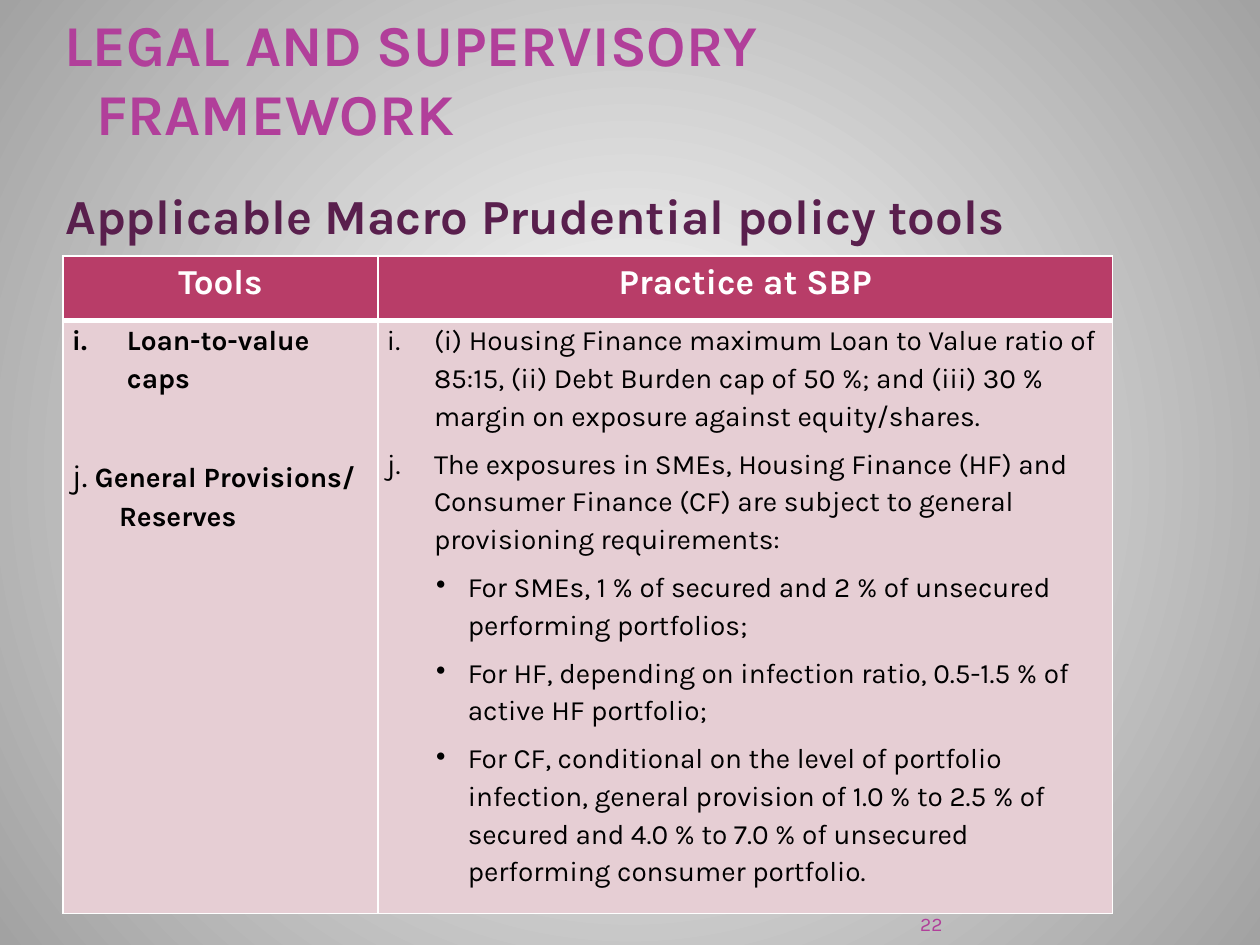
import lxml.etree
import pptx
import pptx.dml.color
import pptx.enum.text
import pptx.oxml
import pptx.oxml.ns
import pptx.util

Cm = pptx.util.Cm
Pt = pptx.util.Pt
RGBColor = pptx.dml.color.RGBColor
qn = pptx.oxml.ns.qn
ALIGN = pptx.enum.text.PP_ALIGN
ANCHOR = pptx.enum.text.MSO_ANCHOR

FONT = "Karla"
WHITE = RGBColor(0xFF, 0xFF, 0xFF)
BLACK = RGBColor(0, 0, 0)
GREY = RGBColor(0xA2, 0xA2, 0xA2)
MAGENTA = RGBColor(0xB1, 0x3F, 0x9A)
PLUM = RGBColor(0x59, 0x1F, 0x4D)
CRIMSON = RGBColor(0xB8, 0x3D, 0x68)
BLUSH = RGBColor(0xE6, 0xCE, 0xD4)


def style_font(font, size, color, bold=False):
    font.name = FONT
    font.size = Pt(size)
    font.bold = bold
    font.color.rgb = color


def add_text(left, top, width, height, text, size, color, bold, anchor, margins):
    box = page.shapes.add_textbox(Cm(left), Cm(top), Cm(width), Cm(height))
    frame = box.text_frame
    frame.word_wrap = True
    frame.vertical_anchor = anchor
    frame.margin_left = frame.margin_right = Cm(margins[0])
    frame.margin_top = frame.margin_bottom = Cm(margins[1])
    para = frame.paragraphs[0]
    para.text = text
    style_font(para.font, size, color, bold)
    return para


deck = pptx.Presentation()
deck.slide_width = Cm(25.4)
deck.slide_height = Cm(19.05)
page = deck.slides.add_slide(deck.slide_layouts[6])

backdrop = page.background.fill
backdrop.gradient()
for stop, color, position in zip(backdrop.gradient_stops, (WHITE, GREY), (0, 1)):
    stop.color.rgb = color
    stop.position = position
gradient = page.background._cSld.find(".//" + qn("a:gradFill"))
linear = gradient.find(qn("a:lin"))
circle = lxml.etree.Element(qn("a:path"), path="circle")
lxml.etree.SubElement(circle, qn("a:fillToRect"), l="50000", t="50000", r="50000", b="50000")
gradient.replace(linear, circle)

number = add_text(17.37, 18.21, 1.63, 0.64, "22", 11, MAGENTA, False, ANCHOR.BOTTOM, (0, 0))
number.alignment = ALIGN.RIGHT

table = page.shapes.add_table(2, 2, Cm(1.27), Cm(5.16), Cm(21.16), Cm(13.26)).table
for column, width in zip(table.columns, (6.35, 14.81)):
    column.width = Cm(width)
for row, height in zip(table.rows, (1.3, 11.96)):
    row.height = Cm(height)

ROMAN = ("a:buAutoNum", {"type": "romanLcPeriod"})
LETTER_J = ("a:buAutoNum", {"type": "alphaLcPeriod", "startAt": "10"})
DOT = ("a:buChar", {"char": "•"})
tools = [
    (["Loan-to-value caps"], ROMAN, 1.11, 1.11, 0),
    (["j. ", "General Provisions/ Reserves"], None, 0.95, 0.95, 33),
]
practices = [
    (["(i) Housing Finance maximum Loan to Value ratio of 85:15, (ii) Debt Burden cap of 50 %; "
      "and (iii) 30 % margin on exposure against equity/shares."], ROMAN, 0.95, 0.95, 0),
    (["The exposures in SMEs, Housing Finance (HF) and Consumer Finance (CF) are subject to "
      "general provisioning requirements:"], LETTER_J, 0.95, 0.95, 6),
    (["For SMEs, 1 % of secured and 2 % of unsecured performing portfolios;"], DOT, 1.63, 0.64, 6),
    (["For HF, depending on infection ratio, 0.5-1.5 % of active HF portfolio;"], DOT, 1.63, 0.64, 6),
    (["For CF, conditional on the level of portfolio infection, general provision of 1.0 % to 2.5 % "
      "of secured and 4.0 % to 7.0 % of unsecured performing consumer portfolio."], DOT, 1.63, 0.64, 6),
]

for index, heading in enumerate(("Tools", "Practice at SBP")):
    cell = table.cell(0, index)
    cell.text = heading
    para = cell.text_frame.paragraphs[0]
    para.alignment = ALIGN.CENTER
    style_font(para.font, 20, WHITE, True)

for index, (entries, bold) in enumerate(((tools, True), (practices, False))):
    cell = table.cell(1, index)
    cell.margin_left = cell.margin_right = Cm(0.18)
    cell.margin_top = cell.margin_bottom = 0
    frame = cell.text_frame
    for order, (texts, bullet, left, hanging, before) in enumerate(entries):
        para = frame.add_paragraph() if order else frame.paragraphs[0]
        properties = para._p.get_or_add_pPr()
        properties.set("marL", str(Cm(left)))
        properties.set("indent", str(-Cm(hanging)))
        if bullet:
            tag, attributes = bullet
            lxml.etree.SubElement(properties, qn(tag), attributes)
        para.line_spacing = 1.15
        if before:
            para.space_before = Pt(before)
        for text in texts:
            para.add_run().text = text
        if len(texts) == 1:
            style_font(para.font, 16, BLACK, bold)
        else:
            label, name = para.runs
            style_font(label.font, 18, BLACK)
            style_font(name.font, 16, BLACK, True)

for row_index, (color, top, bottom) in enumerate(((CRIMSON, 1, 3), (BLUSH, 3, 1))):
    for cell in table.rows[row_index].cells:
        cell.fill.solid()
        cell.fill.fore_color.rgb = color
        edges = (("a:lnL", 1), ("a:lnR", 1), ("a:lnT", top), ("a:lnB", bottom))
        for order, (tag, width) in enumerate(edges):
            edge = lxml.etree.Element(qn(tag), w=str(Pt(width)))
            solid = lxml.etree.SubElement(edge, qn("a:solidFill"))
            lxml.etree.SubElement(solid, qn("a:srgbClr"), val=str(WHITE))
            cell._tc.get_or_add_tcPr().insert(order, edge)

title = add_text(0.84, 1.32, 21.6, 1.65, "LEGAL AND SUPERVISORY FRAMEWORK",
                 33, MAGENTA, True, ANCHOR.BOTTOM, (0.13, 0))
title._p.get_or_add_pPr().set("marL", str(Cm(0.97)))
title._p.get_or_add_pPr().set("indent", str(-Cm(0.64)))

subtitle = add_text(1.07, 3.61, 21.39, 1.45, "Applicable Macro Prudential policy tools",
                    28, PLUM, True, ANCHOR.TOP, (0.25, 0.13))
subtitle.space_after = Pt(6)

deck.save("out.pptx")
